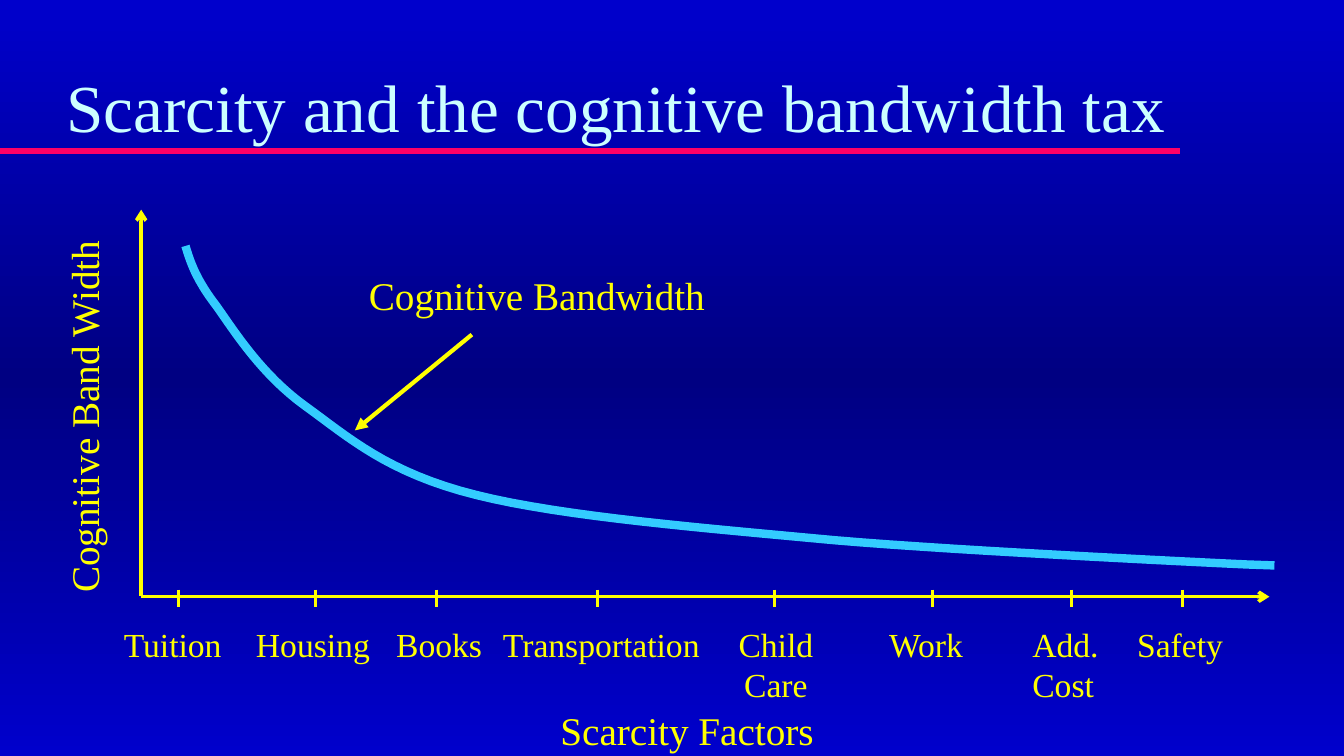
from copy import deepcopy

from lxml.etree import SubElement
from pptx import Presentation
from pptx.dml.color import RGBColor
from pptx.enum.shapes import MSO_CONNECTOR
from pptx.enum.text import MSO_ANCHOR, PP_ALIGN
from pptx.oxml.ns import qn
from pptx.util import Inches, Pt

TITLE = "Scarcity and the cognitive bandwidth tax"
FONT = "Times New Roman"
YELLOW, PALE, PINK, SKY = "FFFF00", "CCFFFF", "FF0066", "33CCFF"
BACKGROUND = [(0, "0000CC"), (0.5, "000082"), (1, "0000CC")]

# label, tick x, label left, label width, alignment, wrap
FACTORS = [
    ("Tuition", 1.77, 1.13, 1.27, PP_ALIGN.LEFT, True),
    ("Housing", 3.13, 2.44, 1.34, PP_ALIGN.LEFT, False),
    ("Books", 4.33, 3.7, 1.31, PP_ALIGN.CENTER, True),
    ("Transportation", 5.93, 4.89, 2.28, PP_ALIGN.LEFT, True),
    ("Child Care", 7.68, 6.99, 1.41, PP_ALIGN.CENTER, True),
    ("Work", 9.25, 8.72, 1.1, PP_ALIGN.LEFT, True),
    ("Add.\vCost", 10.63, 10.14, 0.95, PP_ALIGN.LEFT, True),
    ("Safety", 11.73, 11.18, 1.07, PP_ALIGN.LEFT, True),
]
TICK_TOP, TICK_BOTTOM, LABEL_TOP = 5.85, 6.02, 6.14

CURVE_START = (1.84, 2.44)
# two control points and an end point for each Bezier segment
CURVE = [
    ((1.89, 2.61), (1.95, 2.78), (2.15, 3.04)),
    ((2.34, 3.31), (2.6, 3.72), (3.03, 4.03)),
    ((3.46, 4.34), (3.84, 4.69), (4.72, 4.91)),
    ((5.6, 5.13), (7.01, 5.24), (8.28, 5.36)),
    ((9.56, 5.47), (12.36, 5.6), (12.36, 5.6)),
]
CURVE_END = (12.64, 5.61)
STEPS = 16


def color(value):
    return RGBColor.from_string(value)


def style(para, size, value):
    para.font.name = FONT
    para.font.size = Pt(size)
    para.font.color.rgb = color(value)


def add_label(page, text, left, top, width, height, size=28,
              align=PP_ALIGN.LEFT, wrap=True):
    box = page.shapes.add_textbox(*map(Inches, (left, top, width, height)))
    frame = box.text_frame
    frame.word_wrap = wrap
    para = frame.paragraphs[0]
    para.text = text
    para.alignment = align
    style(para, size, YELLOW)
    return box


def add_line(page, start, end, value, width, head=None):
    line = page.shapes.add_connector(
        MSO_CONNECTOR.STRAIGHT, *map(Inches, (*start, *end)))
    line.line.color.rgb = color(value)
    line.line.width = Pt(width)
    if head:
        SubElement(line.line._get_or_add_ln(), qn("a:tailEnd"), type=head)
    SubElement(line._element.spPr, qn("a:effectLst"))


def bezier(p0, p1, p2, p3):
    """Return evenly stepped points along a cubic segment, without its start."""
    points = []
    for step in range(1, STEPS + 1):
        t = step / STEPS
        u = 1 - t
        points.append(tuple(
            u**3 * a + 3 * u * u * t * b + 3 * u * t * t * c + t**3 * d
            for a, b, c, d in zip(p0, p1, p2, p3)))
    return points


def add_curve(page):
    points = [CURVE_START]
    for segment in CURVE:
        points += bezier(points[-1], *segment)
    points.append(CURVE_END)
    scaled = [(Inches(x), Inches(y)) for x, y in points]
    builder = page.shapes.build_freeform(*scaled[0])
    builder.add_line_segments(scaled[1:], close=False)
    curve = builder.convert_to_shape()
    curve.shadow.inherit = False
    curve.fill.background()
    curve.line.color.rgb = color(SKY)
    curve.line.width = Pt(6)


def paint_background(page):
    fill = page.background.fill
    fill.gradient()
    fill.gradient_angle = 90
    first = next(page.element.iter(qn("a:gs")))
    first.addnext(deepcopy(first))
    for stop, (position, value) in zip(fill.gradient_stops, BACKGROUND):
        stop.position = position
        stop.color.rgb = color(value)


def add_title(page):
    title = page.shapes.title
    title.left, title.top, title.width, title.height = map(
        Inches, (0.56, 0.29, 11.7, 1.21))
    title.text_frame.vertical_anchor = MSO_ANCHOR.BOTTOM
    para = title.text_frame.paragraphs[0]
    para.text = TITLE
    para.alignment = PP_ALIGN.LEFT
    style(para, 48, PALE)


def main():
    deck = Presentation()
    deck.slide_width, deck.slide_height = Inches(13.33), Inches(7.5)
    page = deck.slides.add_slide(deck.slide_layouts[5])
    paint_background(page)
    add_line(page, (0, 1.5), (11.7, 1.5), PINK, 4)
    add_title(page)

    axis_name = add_label(page, "Cognitive Band Width", -1.26, 3.85, 4.18, 0.57,
                          align=PP_ALIGN.CENTER)
    axis_name.rotation = 270
    add_label(page, "Scarcity Factors", 5.46, 6.96, 2.74, 0.57, wrap=False)
    add_line(page, (1.4, 5.92), (12.59, 5.92), YELLOW, 2.5, "arrow")
    add_line(page, (1.4, 5.91), (1.4, 2.08), YELLOW, 2.5, "arrow")

    for text, tick, left, width, align, wrap in FACTORS:
        add_line(page, (tick, TICK_TOP), (tick, TICK_BOTTOM), YELLOW, 2)
        height = 0.91 if text in ("Child Care", "Add.\vCost") else 0.5
        add_label(page, text, left, LABEL_TOP, width, height, 24, align, wrap)

    add_curve(page)
    add_label(page, "Cognitive Bandwidth", 3.56, 2.64, 3.72, 0.57)
    add_line(page, (4.68, 3.32), (3.52, 4.27), YELLOW, 3, "triangle")
    deck.save("out.pptx")


if __name__ == "__main__":
    main()
